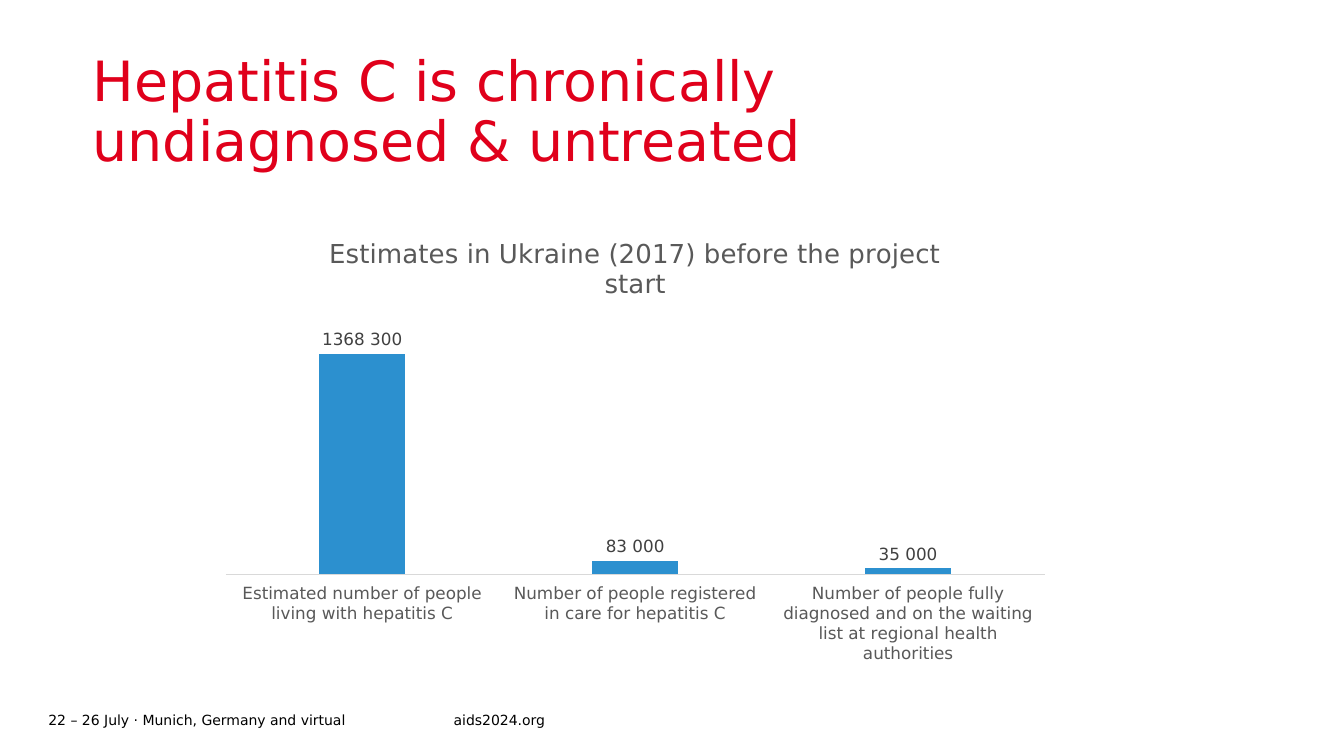
from lxml import etree
from pptx import Presentation
from pptx.chart.data import CategoryChartData
from pptx.dml.color import RGBColor
from pptx.enum.chart import (
    XL_CHART_TYPE as ChartType,
    XL_LABEL_POSITION as LabelPosition,
    XL_TICK_LABEL_POSITION as TickLabels,
    XL_TICK_MARK as TickMark,
)
from pptx.enum.text import MSO_ANCHOR as Anchor
from pptx.oxml.ns import qn
from pptx.util import Pt

PX = 9144  # EMU per px, 100 px to the inch
FONT = "DejaVu Sans"
RED = RGBColor(0xE0, 0x00, 0x1B)
BLUE = RGBColor(0x2C, 0x90, 0xCF)
BLACK = RGBColor(0x00, 0x00, 0x00)
LABEL_GREY = RGBColor(0x40, 0x40, 0x40)
AXIS_GREY = RGBColor(0x59, 0x59, 0x59)
LINE_GREY = RGBColor(0xD9, 0xD9, 0xD9)

ESTIMATES = {
    "Estimated number of people living with hepatitis C": 1368300,
    "Number of people registered in care for hepatitis C": 83000,
    "Number of people fully diagnosed and on the waiting list "
    "at regional health authorities": 35000,
}


def emu(*lengths):
    return [length * PX for length in lengths]


def style(font, size, color):
    font.name = FONT
    font.size = Pt(size)
    font.bold = False
    font.color.rgb = color


def add_text(slide, box, text, size=10, color=BLACK, anchor=Anchor.TOP, spacing=1.0):
    frame = slide.shapes.add_textbox(*emu(*box)).text_frame
    frame.word_wrap = True
    frame.vertical_anchor = anchor
    frame.margin_left = frame.margin_right = 0
    frame.margin_top = frame.margin_bottom = 0
    paragraph = frame.paragraphs[0]
    paragraph.line_spacing = spacing
    run = paragraph.add_run()
    run.text = text
    style(run.font, size, color)


def fix_plot_area(chart, **fractions):
    """Pin the inner plot area to fractions x, y, w, h of the chart."""
    plot_area = chart._chartSpace.chart.plotArea
    for old in plot_area.findall(qn("c:layout")):
        plot_area.remove(old)
    layout = etree.Element(qn("c:layout"))
    manual = etree.SubElement(layout, qn("c:manualLayout"))
    settings = {"layoutTarget": "inner", "xMode": "edge", "yMode": "edge", **fractions}
    for tag, value in settings.items():
        etree.SubElement(manual, qn(f"c:{tag}")).set("val", str(value))
    plot_area.insert(0, layout)


def add_estimates_chart(slide, box):
    data = CategoryChartData(number_format="#\\ ##0")
    data.categories = list(ESTIMATES)
    data.add_series("Series 1", list(ESTIMATES.values()))
    chart = slide.shapes.add_chart(ChartType.COLUMN_CLUSTERED, *emu(*box), data).chart
    style(chart.font, 10, BLACK)
    chart.has_legend = False

    chart.has_title = True
    heading = chart.chart_title.text_frame.paragraphs[0].add_run()
    heading.text = "Estimates in Ukraine (2017) before the project start"
    style(heading.font, 18.6, AXIS_GREY)
    chart.chart_title.include_in_layout = False

    groups = chart.category_axis
    groups.major_tick_mark = groups.minor_tick_mark = TickMark.NONE
    groups.tick_label_position = TickLabels.LOW
    groups.format.line.color.rgb = LINE_GREY
    groups.format.line.width = Pt(0.75)
    style(groups.tick_labels.font, 12, AXIS_GREY)

    people = chart.value_axis
    people.visible = False
    people.has_major_gridlines = False
    people.minimum_scale, people.maximum_scale = 0, 1600000

    plot = chart.plots[0]
    plot.gap_width, plot.overlap = 219, -27
    plot.vary_by_categories = False
    columns = plot.series[0]
    columns.format.fill.solid()
    columns.format.fill.fore_color.rgb = BLUE
    labels = columns.data_labels
    labels.show_value = True
    labels.position = LabelPosition.OUTSIDE_END
    labels.number_format = "#\\ ##0"
    labels.number_format_is_linked = False
    style(labels.font, 12, LABEL_GREY)

    fix_plot_area(chart, x=0.02, y=0.22, w=0.96, h=0.57)


def add_footer(slide, box):
    left, top, width, height = box
    date_width = 402
    add_text(slide, (left, top, date_width, height),
             "22 – 26 July · Munich, Germany and virtual", anchor=Anchor.MIDDLE)
    add_text(slide, (left + date_width, top, width - date_width, height),
             "aids2024.org", anchor=Anchor.MIDDLE)


def main():
    deck = Presentation()
    deck.slide_width, deck.slide_height = emu(1333, 750)
    slide = deck.slides.add_slide(deck.slide_layouts[6])
    add_footer(slide, (48, 702, 595, 24))
    add_text(slide, (92, 53, 972, 87),
             "Hepatitis C is chronically undiagnosed & untreated",
             size=39.6, color=RED, spacing=0.9)
    add_estimates_chart(slide, (207, 215, 846, 449))
    deck.save("out.pptx")


if __name__ == "__main__":
    main()
